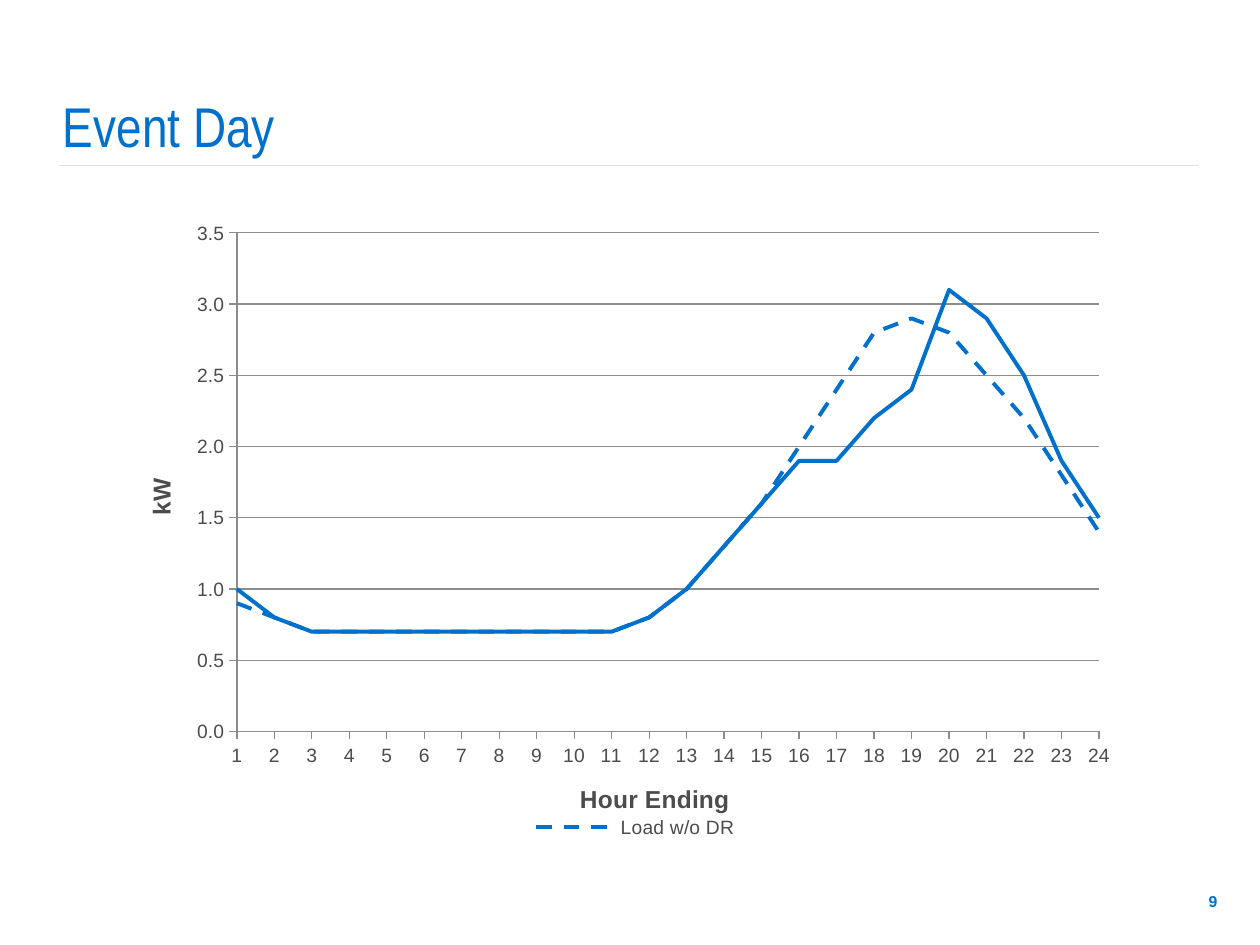
from dataclasses import dataclass

from pptx import Presentation
from pptx.chart.axis import CategoryAxis, ValueAxis
from pptx.chart.chart import Chart
from pptx.chart.data import CategoryChartData
from pptx.dml.color import RGBColor
from pptx.enum.chart import XL_CHART_TYPE, XL_LEGEND_POSITION, XL_TICK_LABEL_POSITION, XL_TICK_MARK
from pptx.enum.dml import MSO_LINE
from pptx.enum.shapes import MSO_CONNECTOR
from pptx.enum.text import MSO_ANCHOR, PP_ALIGN
from pptx.oxml import parse_xml
from pptx.oxml.ns import nsdecls, qn
from pptx.slide import Slide
from pptx.text.text import Font
from pptx.util import Cm, Pt

BLUE = "0070CD"
GRAY = "4C4C4C"
AXIS_GRAY = "8C8C8C"
RULE_GRAY = "E0E0E0"


@dataclass(frozen=True)
class Label:
    text: str
    left: float
    top: float
    width: float
    height: float
    size: int
    font: str
    bold: bool
    align: PP_ALIGN
    anchor: MSO_ANCHOR
    inset_left: float


@dataclass(frozen=True)
class LoadCurve:
    name: str
    values: tuple[float, ...]
    dash: MSO_LINE


LABELS = (
    Label("9", 23.14, 17.65, 1.65, 1.02, 9, "Arial", True,
          PP_ALIGN.RIGHT, MSO_ANCHOR.MIDDLE, 0.25),
    Label("Event Day", 1.27, 1.45, 22.89, 1.88, 32, "Arial Narrow", False,
          PP_ALIGN.LEFT, MSO_ANCHOR.BOTTOM, 0),
)
CURVES = (
    LoadCurve("Load w/o DR",
              (0.9, 0.8, 0.7, 0.7, 0.7, 0.7, 0.7, 0.7, 0.7, 0.7, 0.7, 0.8,
               1, 1.3, 1.6, 2, 2.4, 2.8, 2.9, 2.8, 2.5, 2.2, 1.8, 1.4), MSO_LINE.DASH),
    LoadCurve("Load w/ DR",
              (1, 0.8, 0.7, 0.7, 0.7, 0.7, 0.7, 0.7, 0.7, 0.7, 0.7, 0.8,
               1, 1.3, 1.6, 1.9, 1.9, 2.2, 2.4, 3.1, 2.9, 2.5, 1.9, 1.5), MSO_LINE.SOLID),
)


def color(value: str) -> RGBColor:
    """Turn a hex string into a colour."""
    return RGBColor.from_string(value)


def style_font(font: Font, size: int, name: str, value: str, bold: bool = False) -> None:
    """Set the face, size, weight and colour of a font."""
    font.size = Pt(size)
    font.name = name
    font.bold = bold
    font.color.rgb = color(value)


def add_label(slide: Slide, label: Label) -> None:
    """Add a single-line text box."""
    shape = slide.shapes.add_textbox(
        Cm(label.left), Cm(label.top), Cm(label.width), Cm(label.height))
    text_frame = shape.text_frame
    text_frame.word_wrap = True
    text_frame.vertical_anchor = label.anchor
    text_frame.margin_left = Cm(label.inset_left)
    text_frame.text = label.text
    paragraph = text_frame.paragraphs[0]
    paragraph.alignment = label.align
    style_font(paragraph.runs[0].font, label.size, label.font, BLUE, label.bold)


def add_rule(slide: Slide) -> None:
    """Add the thin line below the title."""
    rule = slide.shapes.add_connector(
        MSO_CONNECTOR.STRAIGHT, Cm(1.19), Cm(3.33), Cm(24.18), Cm(3.33))
    rule.line.color.rgb = color(RULE_GRAY)
    rule.line.width = Pt(0.75)
    rule._element.spPr.append(parse_xml(f"<a:effectLst {nsdecls('a')}/>"))


def place(parent, successor: str, target: str = "", **percents: float) -> None:
    """Give a chart part a manual layout, in percent of the chart."""
    for layout in parent.findall(qn("c:layout")):
        parent.remove(layout)
    inner = f'<c:layoutTarget val="{target}"/>' if target else ""
    modes = "".join(f'<c:{key}Mode val="edge"/>' for key in "xy")
    sizes = "".join(f'<c:{key} val="{value / 100}"/>' for key, value in percents.items())
    parent.find(qn(successor)).addprevious(parse_xml(
        f"<c:layout {nsdecls('c')}><c:manualLayout>{inner}{modes}{sizes}"
        "</c:manualLayout></c:layout>"))


def style_axis(axis: CategoryAxis | ValueAxis, title: str, rotation: int,
               x: float, y: float) -> None:
    """Style an axis and place its title."""
    axis.major_tick_mark = XL_TICK_MARK.OUTSIDE
    axis.minor_tick_mark = XL_TICK_MARK.NONE
    axis.format.line.color.rgb = color(AXIS_GRAY)
    axis.format.line.width = Pt(0.75)
    style_font(axis.tick_labels.font, 11, "Arial", GRAY)
    text_frame = axis.axis_title.text_frame
    text_frame.text = title
    text_frame._txBody.bodyPr.set("rot", str(rotation))
    style_font(text_frame.paragraphs[0].runs[0].font, 14, "Arial", GRAY, True)
    place(axis.axis_title._element, "c:overlay", x=x, y=y)


def style_legend(chart: Chart) -> None:
    """Show a legend for the first curve only."""
    chart.has_legend = True
    legend = chart.legend
    legend.position = XL_LEGEND_POSITION.TOP
    legend.include_in_layout = False
    style_font(legend.font, 11, "Arial", GRAY)
    place(legend._element, "c:overlay", x=39, y=90, w=23, h=6)
    legend._element.find(qn("c:layout")).addprevious(parse_xml(
        f'<c:legendEntry {nsdecls("c")}><c:idx val="1"/><c:delete val="1"/></c:legendEntry>'))


def add_load_chart(slide: Slide) -> None:
    """Add the hourly load line chart."""
    chart_data = CategoryChartData(number_format="0.0")
    chart_data.categories = [str(hour) for hour in range(1, 25)]
    for curve in CURVES:
        chart_data.add_series(curve.name, curve.values)
    chart = slide.shapes.add_chart(
        XL_CHART_TYPE.LINE, Cm(2.64), Cm(3.66), Cm(20.14), Cm(14), chart_data).chart
    chart.has_title = False
    style_font(chart.font, 10, "Arial", GRAY)
    chart.plots[0].vary_by_categories = False
    for curve, series in zip(CURVES, chart.plots[0].series):
        series.smooth = False
        series.format.line.color.rgb = color(BLUE)
        series.format.line.width = Pt(2.25)
        series.format.line.dash_style = curve.dash

    style_axis(chart.category_axis, "Hour Ending", 0, 44.5, 86)
    chart.category_axis.tick_label_position = XL_TICK_LABEL_POSITION.LOW
    value_axis = chart.value_axis
    style_axis(value_axis, "kW", -5400000, 1, 42)
    value_axis.minimum_scale = 0
    value_axis.maximum_scale = 3.5
    value_axis.major_unit = 0.5
    value_axis.tick_labels.number_format = "0.0"
    value_axis.tick_labels.number_format_is_linked = False
    value_axis.has_major_gridlines = True
    value_axis.major_gridlines.format.line.color.rgb = color(AXIS_GRAY)
    value_axis.major_gridlines.format.line.width = Pt(0.75)
    value_axis._element.find(qn("c:majorUnit")).addprevious(
        parse_xml(f'<c:crossBetween {nsdecls("c")} val="midCat"/>'))
    plot_area = chart._chartSpace.chart.plotArea
    place(plot_area, "c:lineChart", "inner", x=10.6, y=7.4, w=86.3, h=71.8)
    style_legend(chart)


def main() -> None:
    """Build and save the slide."""
    presentation = Presentation()
    presentation.slide_width = Cm(25.4)
    presentation.slide_height = Cm(19.05)
    slide = presentation.slides.add_slide(presentation.slide_layouts[6])
    add_rule(slide)
    for label in LABELS:
        add_label(slide, label)
    add_load_chart(slide)
    presentation.save("out.pptx")


if __name__ == "__main__":
    main()
